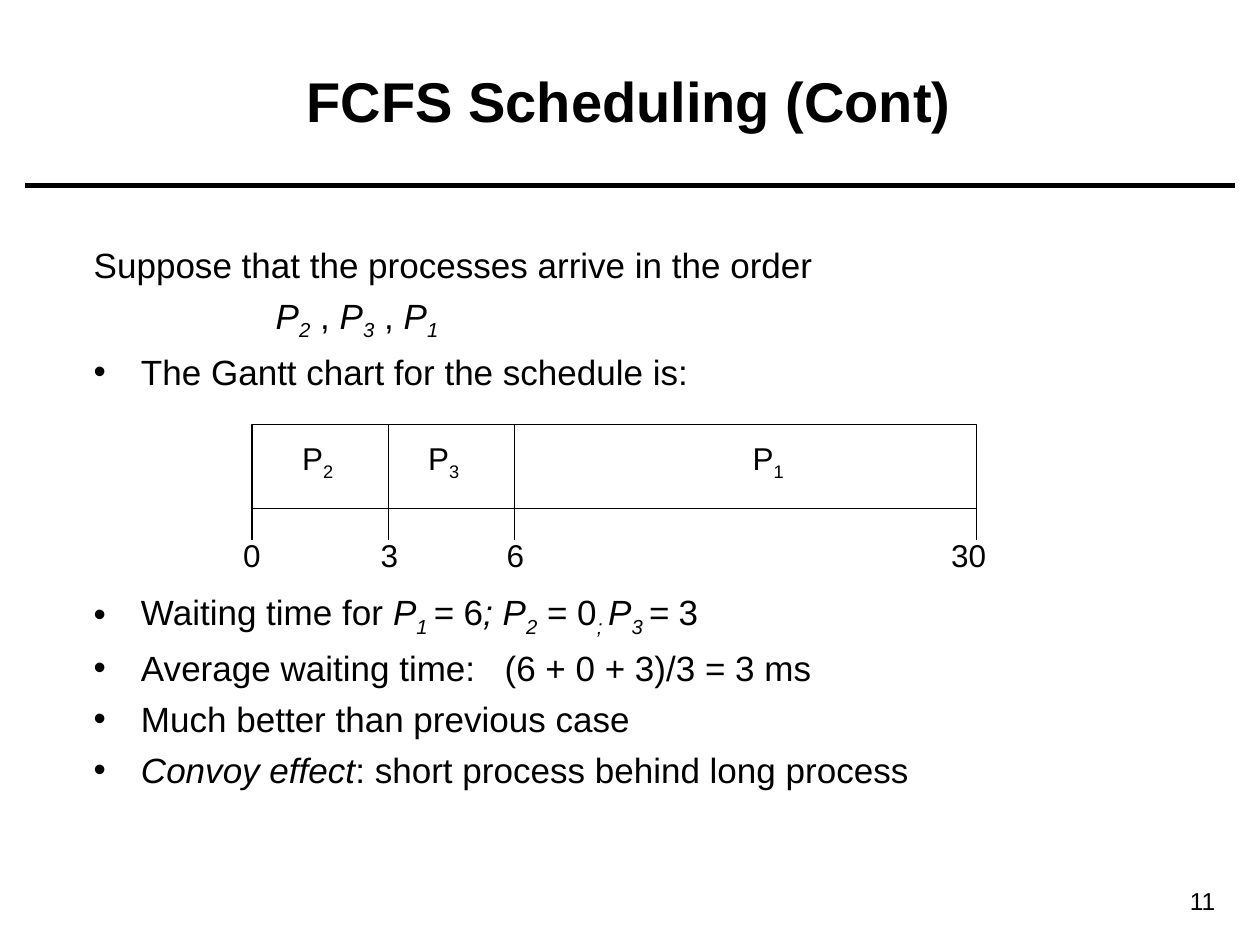
from lxml.etree import SubElement
from pptx import Presentation
from pptx.dml.color import RGBColor
from pptx.enum.shapes import MSO_CONNECTOR, MSO_SHAPE
from pptx.enum.text import MSO_ANCHOR, PP_ALIGN
from pptx.oxml.ns import qn
from pptx.util import Pt

COLORS = {"ink": "000000", "paper": "FFFFFF"}
FONT = "Arial"
BAR_LEFT, BAR_TOP, BAR_WIDTH, BAR_HEIGHT = 144, 242.5, 414, 48
TICK_LENGTH = 18
TICKS = [("0", 144, 144), ("3", 222, 222.5), ("6", 294, 294.5), ("30", 558, 553.5)]
PROCESSES = [("2", 181.5), ("3", 253.5), ("1", 439)]

# Each paragraph: bullet, left margin, space before, runs of (text, style).
BODY = [
    (False, 0, 0, [("Suppose that the processes arrive in the order", "")]),
    (False, 104, 5, [("P", "i"), ("2", "is"), (" , ", ""), ("P", "i"), ("3", "is"),
                     (" , ", ""), ("P", "i"), ("1", "is")]),
    (True, 27, 5, [("The Gantt chart for the schedule is:", "")]),
    (True, 27, 113, [("Waiting time for ", ""), ("P", "i"), ("1 ", "is"), ("=", "i"),
                     (" 6", ""), ("; P", "i"), ("2", "is"), (" = 0", ""), ("; ", "is"),
                     ("P", "i"), ("3 ", "is"), ("= ", "i"), ("3", "")]),
    (True, 27, 5, [("Average waiting time:", ""), (" ", "w"),
                   ("(6 + 0 + 3)/3 = 3 ms", "")]),
    (True, 27, 5, [("Much better than previous case", "")]),
    (True, 27, 5, [("Convoy effect", "i"), (": short process behind long process", "")]),
]


def rgb(name):
    return RGBColor.from_string(COLORS[name])


def add_run(p, text, size, style=""):
    r = p.add_run()
    r.text = text
    r.font.name = FONT
    r.font.size = Pt(size)
    r.font.color.rgb = rgb("ink")
    r.font.bold = "b" in style
    r.font.italic = "i" in style
    rPr = r.font._element
    if "s" in style:
        rPr.set("baseline", "-25000")
    if "w" in style:
        rPr.set("spc", "1100")


def set_paragraph(p, bullet, margin, before):
    p.space_before = Pt(before)
    pPr = p._p.get_or_add_pPr()
    pPr.set("marL", str(Pt(margin)))
    pPr.set("indent", str(Pt(-margin if bullet else 0)))
    if bullet:
        SubElement(pPr, qn("a:buFont")).set("typeface", FONT)
        SubElement(pPr, qn("a:buChar")).set("char", "•")
    else:
        SubElement(pPr, qn("a:buNone"))


def add_line(shapes, x1, y1, x2, y2, width):
    line = shapes.add_connector(MSO_CONNECTOR.STRAIGHT, Pt(x1), Pt(y1), Pt(x2), Pt(y2))
    line.line.color.rgb = rgb("ink")
    line.line.width = Pt(width)
    SubElement(line._element.spPr, qn("a:effectLst"))


def add_label(shapes, center, top, width, runs):
    sp = shapes.add_textbox(Pt(center - width / 2), Pt(top), Pt(width), Pt(29))
    tf = sp.text_frame
    tf.word_wrap = False
    tf.vertical_anchor = MSO_ANCHOR.MIDDLE
    p = tf.paragraphs[0]
    p.alignment = PP_ALIGN.CENTER
    for text, style in runs:
        add_run(p, text, 18, style)


def set_title(s, text):
    sp = s.shapes.title
    sp.left, sp.top, sp.width, sp.height = Pt(25), Pt(12), Pt(669), Pt(90)
    tf = sp.text_frame
    tf.vertical_anchor = MSO_ANCHOR.MIDDLE
    p = tf.paragraphs[0]
    p.alignment = PP_ALIGN.CENTER
    add_run(p, text, 32, "b")


def add_body(s):
    tf = s.shapes.add_textbox(Pt(46.5), Pt(135.5), Pt(648), Pt(356)).text_frame
    tf.word_wrap = True
    for i, (bullet, margin, before, runs) in enumerate(BODY):
        p = tf.add_paragraph() if i else tf.paragraphs[0]
        set_paragraph(p, bullet, margin, before)
        for text, style in runs:
            add_run(p, text, 20, style)


def add_gantt(s):
    shapes = s.shapes.add_group_shape().shapes
    bar = shapes.add_shape(MSO_SHAPE.RECTANGLE, Pt(BAR_LEFT), Pt(BAR_TOP),
                           Pt(BAR_WIDTH), Pt(BAR_HEIGHT))
    bar.shadow.inherit = False
    bar.fill.solid()
    bar.fill.fore_color.rgb = rgb("paper")
    bar.line.color.rgb = rgb("ink")
    bar.line.width = Pt(0.75)
    bottom = BAR_TOP + BAR_HEIGHT
    for number, center in PROCESSES:
        add_label(shapes, center, BAR_TOP + 6, 33, [("P", ""), (number, "s")])
    for _, x, _ in TICKS[1:-1]:
        add_line(shapes, x, BAR_TOP, x, bottom, 0.75)
    for time, x, center in TICKS:
        add_line(shapes, x, bottom, x, bottom + TICK_LENGTH, 0.75)
        add_label(shapes, center, bottom + 12, 14.5 + 10 * len(time), [(time, "")])


def add_slide_number(s, number):
    tf = s.shapes.add_textbox(Pt(626.5), Pt(502.5), Pt(75), Pt(24.5)).text_frame
    tf.word_wrap = True
    p = tf.paragraphs[0]
    p.alignment = PP_ALIGN.RIGHT
    add_run(p, number, 14)


def main():
    prs = Presentation()
    prs.slide_width, prs.slide_height = Pt(720), Pt(540)
    s = prs.slides.add_slide(prs.slide_layouts[5])
    add_line(s.shapes, 14.4, 106, 705.6, 106, 3)
    add_slide_number(s, "11")
    set_title(s, "FCFS Scheduling (Cont)")
    add_body(s)
    add_gantt(s)
    prs.save("out.pptx")


if __name__ == "__main__":
    main()
